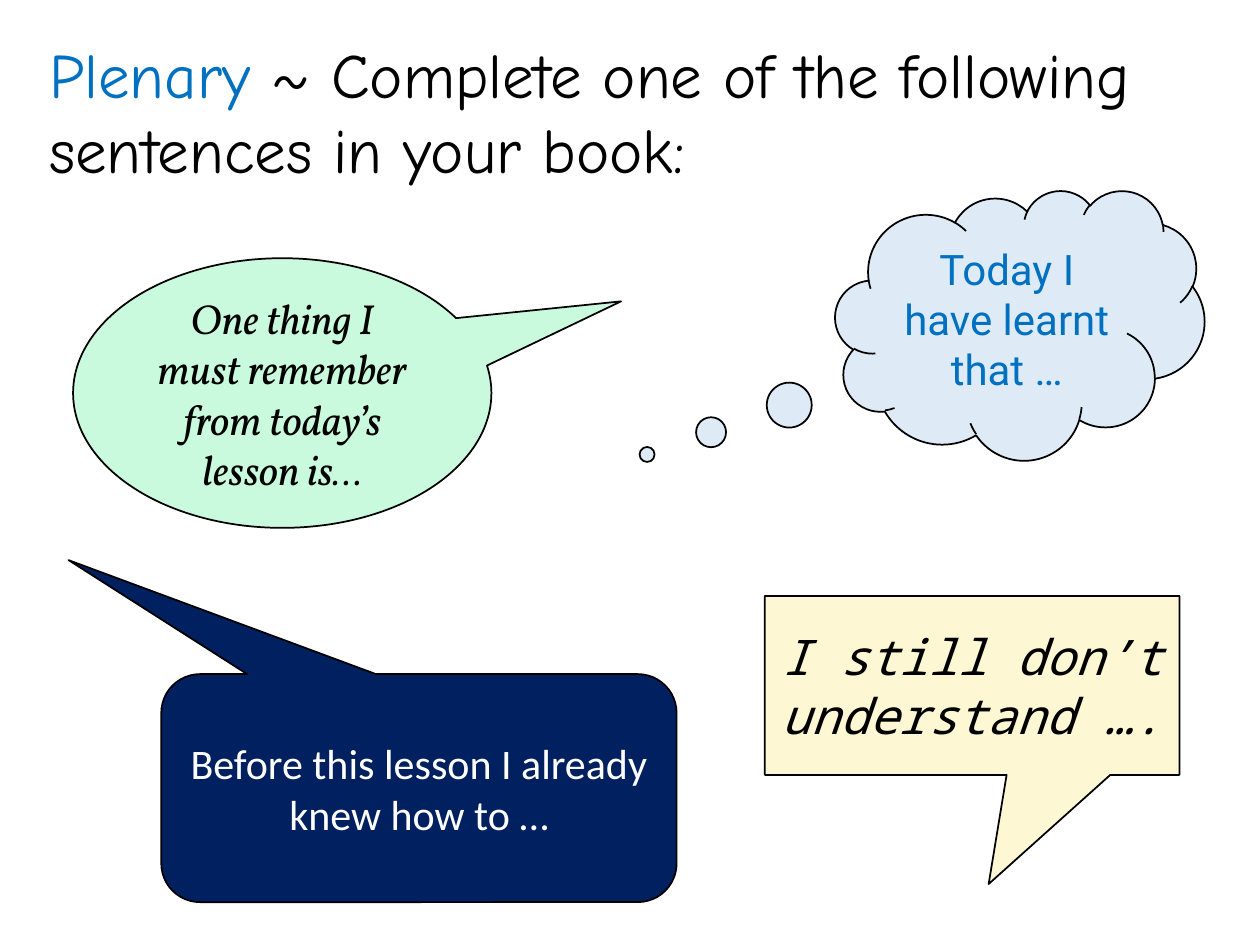
from pptx import Presentation
from pptx.dml.color import RGBColor
from pptx.enum.shapes import MSO_SHAPE
from pptx.enum.text import MSO_ANCHOR, PP_ALIGN
from pptx.util import Inches, Pt

CLOUD = MSO_SHAPE.CLOUD_CALLOUT
ELLIPSE = MSO_SHAPE.OVAL_CALLOUT
ROUNDED = MSO_SHAPE.ROUNDED_RECTANGULAR_CALLOUT
RECTANGLE = MSO_SHAPE.RECTANGULAR_CALLOUT
TOP, MIDDLE = MSO_ANCHOR.TOP, MSO_ANCHOR.MIDDLE
LEFT, CENTER = PP_ALIGN.LEFT, PP_ALIGN.CENTER
TITLE_ONLY = 5

COLORS = {
    "black": "000000",
    "white": "FFFFFF",
    "blue": "0070C0",
    "navy": "002060",
    "sky": "DEEBF7",
    "mint": "CAFADD",
    "cream": "FDF7D3",
}

# Kind, box, adjustments (pointer tip first), fill, sentence, text colour, font format
PROMPTS = [
    (CLOUD, (6.63, 1.51, 2.93, 2.14), (-1.01, 0.48), "sky",
     "Today I have learnt that …", "blue",
     {"name": "Roboto", "size": Pt(24)}),
    (ELLIPSE, (0.58, 2.05, 3.32, 2.14), (0.81, -0.34), "mint",
     "One thing I must remember from today’s lesson is…", "black",
     {"name": "Vollkorn", "size": Pt(24), "italic": True}),
    (ROUNDED, (1.28, 5.35, 4.09, 1.81), (-0.68, -1, 0.17), "navy",
     "Before this lesson I already knew how to …", "white",
     {"name": "Calibri", "size": Pt(24)}),
    (RECTANGLE, (6.07, 4.73, 3.29, 1.42), (0.04, 1.11), "cream",
     "I still don’t understand …. ", "black",
     {"name": "Noto Sans Mono", "size": Pt(28), "italic": True}),
]


def color(name):
    return RGBColor.from_string(COLORS[name])


def add_run(paragraph, text, text_color, font_format):
    run = paragraph.add_run()
    run.text = text
    for attribute, value in font_format.items():
        setattr(run.font, attribute, value)
    run.font.color.rgb = color(text_color)


def add_heading(slide):
    heading = slide.shapes.title
    heading.left, heading.top, heading.width, heading.height = map(
        Inches, (0.29, 0.23, 9.53, 1.62))
    heading.text_frame.vertical_anchor = TOP
    paragraph = heading.text_frame.paragraphs[0]
    paragraph.alignment = LEFT
    heading_font = {"name": "Comic Neue", "size": Pt(36)}
    add_run(paragraph, "Plenary ", "blue", heading_font)
    add_run(paragraph, "~ Complete one of the following sentences in your book:",
            "black", heading_font)


def add_callout(slide, kind, box, adjustments, fill, sentence, text_color, font_format):
    callout = slide.shapes.add_shape(kind, *map(Inches, box))
    for index, value in enumerate(adjustments):
        callout.adjustments[index] = value
    callout.shadow.inherit = False
    callout.fill.solid()
    callout.fill.fore_color.rgb = color(fill)
    callout.line.color.rgb = color("black")
    callout.line.width = Pt(1)

    frame = callout.text_frame
    frame.word_wrap = True
    frame.vertical_anchor = MIDDLE
    paragraph = frame.paragraphs[0]
    paragraph.alignment = CENTER
    add_run(paragraph, sentence, text_color, font_format)


def main():
    presentation = Presentation()
    presentation.slide_width = Inches(10)
    presentation.slide_height = Inches(7.5)
    slide = presentation.slides.add_slide(presentation.slide_layouts[TITLE_ONLY])

    # Task for the class
    add_heading(slide)

    # Sentence starters
    for prompt in PROMPTS:
        add_callout(slide, *prompt)

    presentation.save("out.pptx")


if __name__ == "__main__":
    main()
